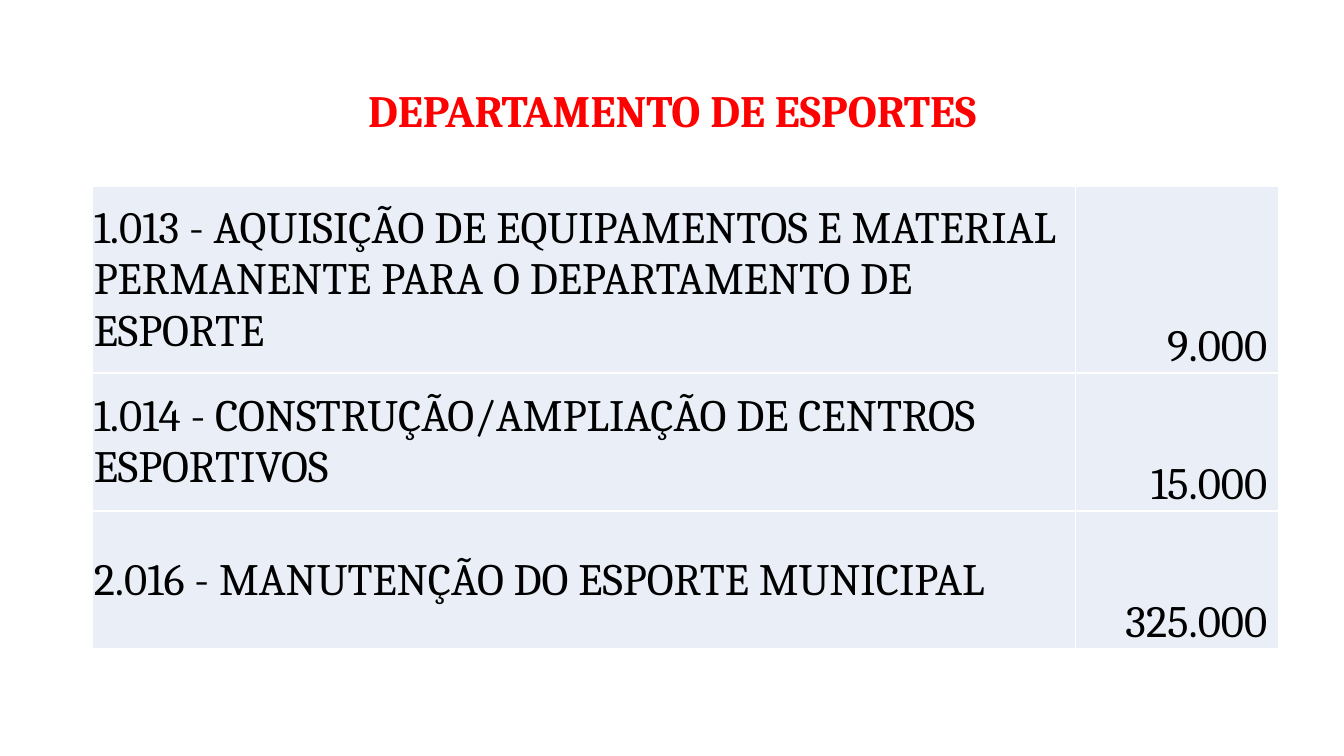
from lxml.etree import SubElement
from pptx import Presentation
from pptx.dml.color import RGBColor
from pptx.enum.text import MSO_ANCHOR as Anchor, PP_ALIGN as Align
from pptx.oxml.ns import qn
from pptx.util import Inches, Pt

# Content
TITLE = "DEPARTAMENTO DE ESPORTES"
BUDGET = [
    ("1.013 - AQUISIÇÃO DE EQUIPAMENTOS E MATERIAL PERMANENTE PARA O DEPARTAMENTO DE ESPORTE", "9.000"),
    ("1.014 - CONSTRUÇÃO/AMPLIAÇÃO DE CENTROS ESPORTIVOS", "15.000"),
    ("2.016 - MANUTENÇÃO DO ESPORTE MUNICIPAL", "325.000"),
]

# Layout: per column width, alignment, anchor and right margin
COLUMNS = [
    (9.75, Align.LEFT, Anchor.MIDDLE, 0.01),
    (2.01, Align.RIGHT, Anchor.BOTTOM, 0.11),
]
ROW_HEIGHTS = [1.85, 1.37, 1.37]
LEFT, TITLE_TOP, TABLE_TOP = 0.92, 0.4, 1.85


def color(value):
    return RGBColor.from_string(value)


def write(frame, text, align, value, bold=False):
    paragraph = frame.paragraphs[0]
    paragraph.alignment = align
    run = paragraph.add_run()
    run.text = text
    run.font.name = "Cambria"
    run.font.size = Pt(32)
    run.font.bold = bold
    run.font.color.rgb = color(value)
    return paragraph


def add_borders(cell, value, width):
    properties = cell._tc.get_or_add_tcPr()
    for position, side in enumerate(("a:lnL", "a:lnR", "a:lnT", "a:lnB")):
        line = SubElement(properties, qn(side), w=str(Pt(width)))
        fill = SubElement(line, qn("a:solidFill"))
        SubElement(fill, qn("a:srgbClr"), val=value)
        properties.insert(position, line)


presentation = Presentation()
presentation.slide_width = Inches(13.33)
presentation.slide_height = Inches(7.5)
slide = presentation.slides.add_slide(presentation.slide_layouts[5])

# Title
title = slide.shapes.title
title.left, title.top = Inches(LEFT), Inches(TITLE_TOP)
title.width, title.height = Inches(11.5), Inches(1.45)
title.text_frame.vertical_anchor = Anchor.MIDDLE
write(title.text_frame, TITLE, Align.CENTER, "FF0000", bold=True).line_spacing = 0.9

# Budget table
table = slide.shapes.add_table(
    len(BUDGET), len(COLUMNS), Inches(LEFT), Inches(TABLE_TOP),
    Inches(sum(column[0] for column in COLUMNS)), Inches(sum(ROW_HEIGHTS)),
).table
table.first_row = False
table.horz_banding = False
for row, height in zip(table.rows, ROW_HEIGHTS):
    row.height = Inches(height)

for column_index, (width, align, anchor, right_margin) in enumerate(COLUMNS):
    table.columns[column_index].width = Inches(width)
    for row_index, entry in enumerate(BUDGET):
        cell = table.cell(row_index, column_index)
        cell.fill.solid()
        cell.fill.fore_color.rgb = color("EAEFF7")
        cell.vertical_anchor = anchor
        cell.margin_left = cell.margin_top = Inches(0.01)
        cell.margin_right = Inches(right_margin)
        cell.margin_bottom = 0
        write(cell.text_frame, entry[column_index], align, "000000")
        add_borders(cell, "FFFFFF", 1)

presentation.save("out.pptx")
